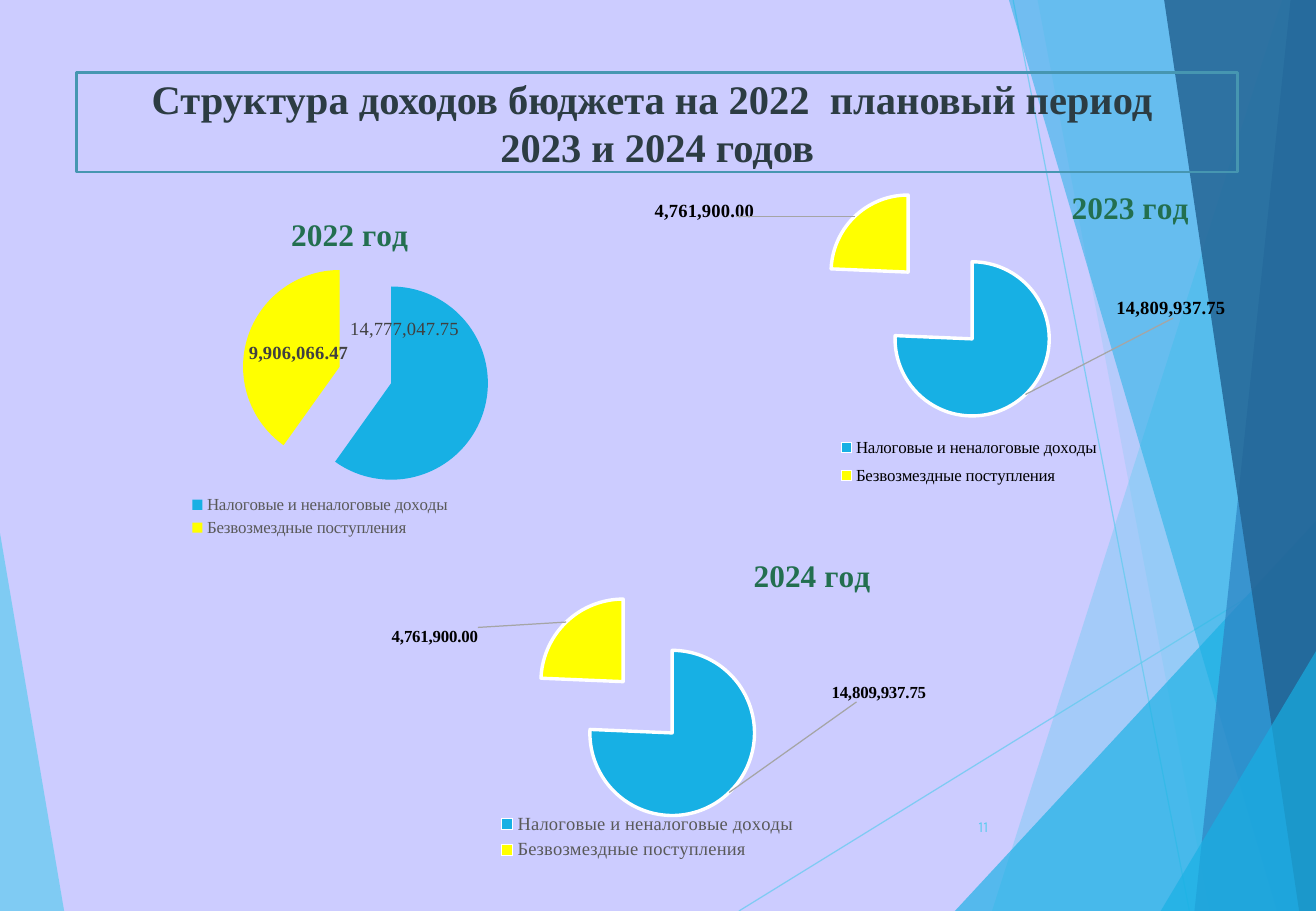
from dataclasses import dataclass

from lxml import etree
from pptx import Presentation
from pptx.chart.data import CategoryChartData
from pptx.dml.color import RGBColor
from pptx.enum.chart import XL_CHART_TYPE, XL_LABEL_POSITION, XL_LEGEND_POSITION
from pptx.enum.shapes import MSO_CONNECTOR, MSO_SHAPE
from pptx.enum.text import MSO_ANCHOR, PP_ALIGN
from pptx.oxml.ns import qn
from pptx.util import Pt

PIE = XL_CHART_TYPE.PIE
BEST_FIT = XL_LABEL_POSITION.BEST_FIT
INSIDE_END = XL_LABEL_POSITION.INSIDE_END
BOTTOM = XL_LEGEND_POSITION.BOTTOM
RIGHT_SIDE = XL_LEGEND_POSITION.RIGHT
STRAIGHT = MSO_CONNECTOR.STRAIGHT
RECTANGLE = MSO_SHAPE.RECTANGLE
MIDDLE = MSO_ANCHOR.MIDDLE
CENTER = PP_ALIGN.CENTER
RIGHT = PP_ALIGN.RIGHT

WIDTH, HEIGHT = 780, 540
NUMBER_FORMAT = "#,##0.00"
CATEGORIES = ["Налоговые и неналоговые доходы", "Безвозмездные поступления"]


@dataclass(frozen=True)
class Theme:
    background: str = "CCCCFF"
    sky: str = "5FCBEF"
    azure: str = "17B0E4"
    blue: str = "2E83C3"
    navy: str = "226292"
    frame: str = "4696B1"
    heading: str = "2C3C43"
    year: str = "236F50"
    gift: str = "FFFF00"
    black: str = "000000"
    gray: str = "595959"
    dark: str = "404040"
    leader: str = "A5A5A5"
    white: str = "FFFFFF"
    serif: str = "Times New Roman"
    sans: str = "Karla"
    heading_size: float = 24
    year_size: float = 18.6
    large_size: float = 11
    base_size: float = 10
    small_size: float = 9


@dataclass(frozen=True)
class Pie:
    year: str
    box: tuple
    values: tuple
    explosion: int
    plot: tuple
    title: tuple
    legend: tuple
    legend_side: object
    legend_color: str
    legend_size: float
    label_position: object
    label_size: float
    label_color: str
    label_offsets: tuple
    label_bold: tuple = (True, True)
    outlined: bool = True


def style_font(font, size, color, name, bold=False):
    font.size = Pt(size)
    font.color.rgb = RGBColor.from_string(color)
    font.name = name
    font.bold = bold


def write_text(frame, text, align=None, **style):
    for index, line in enumerate(text.split("\n")):
        para = frame.add_paragraph() if index else frame.paragraphs[0]
        para.alignment = align
        span = para.add_run()
        span.text = line
        style_font(span.font, **style)


def manual_layout(x, y, width=None, height=None, inner=False, edge=True):
    layout = etree.Element(qn("c:layout"))
    manual = etree.SubElement(layout, qn("c:manualLayout"))
    settings = [("layoutTarget", "inner")] if inner else []
    if edge:
        settings += [("xMode", "edge"), ("yMode", "edge")]
    settings += [("x", x), ("y", y), ("w", width), ("h", height)]
    for tag, value in settings:
        if value is not None:
            etree.SubElement(manual, qn(f"c:{tag}"), val=str(value))
    return layout


def place(parent, layout, after=None):
    for previous in parent.findall(qn("c:layout")):
        parent.remove(previous)
    if after:
        parent.find(qn(after)).addnext(layout)
    else:
        parent.insert(0, layout)


class SlideBuilder:
    def __init__(self, page, theme):
        self.page = page
        self.theme = theme
        fill = page.background.fill
        fill.solid()
        fill.fore_color.rgb = RGBColor.from_string(theme.background)

    def set_opacity(self, shape, percent):
        for color in shape.element.spPr.iter(qn("a:srgbClr")):
            etree.SubElement(color, qn("a:alpha"), val=str(percent * 1000))

    def facet(self, points, color, opacity):
        outline = self.page.shapes.build_freeform(*points[0], scale=Pt(1))
        outline.add_line_segments(points[1:], close=True)
        shape = outline.convert_to_shape()
        shape.shadow.inherit = False
        shape.fill.solid()
        shape.fill.fore_color.rgb = RGBColor.from_string(color)
        shape.line.fill.background()
        self.set_opacity(shape, opacity)

    def line(self, *ends):
        line = self.page.shapes.add_connector(STRAIGHT, *map(Pt, ends))
        line.line.color.rgb = RGBColor.from_string(self.theme.sky)
        line.line.width = Pt(0.75)
        self.set_opacity(line, 70)
        etree.SubElement(line.element.spPr, qn("a:effectLst"))

    def heading(self, text, *box):
        theme = self.theme
        shape = self.page.shapes.add_shape(RECTANGLE, *map(Pt, box))
        shape.shadow.inherit = False
        shape.fill.background()
        shape.line.color.rgb = RGBColor.from_string(theme.frame)
        shape.line.width = Pt(1.5)
        shape.text_frame.vertical_anchor = MIDDLE
        write_text(shape.text_frame, text, align=CENTER, size=theme.heading_size,
                   color=theme.heading, name=theme.serif, bold=True)

    def page_number(self, text, *box):
        theme = self.theme
        frame = self.page.shapes.add_textbox(*map(Pt, box)).text_frame
        frame.word_wrap = True
        frame.vertical_anchor = MIDDLE
        write_text(frame, text, align=RIGHT, size=theme.small_size,
                   color=theme.sky, name=theme.sans)

    def pie(self, pie):
        theme = self.theme
        data = CategoryChartData(number_format=NUMBER_FORMAT)
        data.categories = CATEGORIES
        data.add_series("Series 1", pie.values)
        chart = self.page.shapes.add_chart(PIE, *map(Pt, pie.box), data).chart
        style_font(chart.font, theme.base_size, theme.black, theme.sans)
        chart.has_title = True
        title = chart.chart_title
        write_text(title.text_frame, pie.year, size=theme.year_size,
                   color=theme.year, name=theme.serif, bold=True)
        place(title._element, manual_layout(*pie.title), after="c:tx")
        chart.has_legend = True
        legend = chart.legend
        legend.position = pie.legend_side
        legend.include_in_layout = False
        style_font(legend.font, pie.legend_size, pie.legend_color, theme.serif)
        place(legend._element, manual_layout(*pie.legend), after="c:legendPos")
        plot = chart.plots[0]
        plot.vary_by_categories = True
        place(chart.element.find(".//" + qn("c:plotArea")), manual_layout(*pie.plot, inner=True))
        self.slices(plot.series[0], pie)

    def slices(self, series, pie):
        theme = self.theme
        explosion = etree.Element(qn("c:explosion"), val=str(pie.explosion))
        series._element.find(qn("c:tx")).addnext(explosion)
        labels = series.data_labels
        labels.show_value = True
        labels.number_format = NUMBER_FORMAT
        labels.number_format_is_linked = False
        labels.position = pie.label_position
        style_font(labels.font, pie.label_size, pie.label_color, theme.serif, True)
        for index, color in enumerate((theme.azure, theme.gift)):
            point = series.points[index]
            point.format.fill.solid()
            point.format.fill.fore_color.rgb = RGBColor.from_string(color)
            if pie.outlined:
                point.format.line.color.rgb = RGBColor.from_string(theme.white)
                point.format.line.width = Pt(2)
            else:
                point.format.line.fill.background()
            label = point.data_label
            style_font(label.font, pie.label_size, pie.label_color, theme.serif,
                       pie.label_bold[index])
            label.position = pie.label_position
        for body in labels._element.iter(qn("a:bodyPr")):
            body.set("wrap", "none")
        for element, offset in zip(labels._element.findall(qn("c:dLbl")), pie.label_offsets):
            place(element, manual_layout(*offset, edge=False), after="c:idx")
        for previous in labels._element.findall(qn("c:showLeaderLines")):
            previous.set("val", str(int(pie.outlined)))
            leader = etree.Element(qn("c:leaderLines"))
            previous.addnext(leader)
            line = etree.SubElement(etree.SubElement(leader, qn("c:spPr")), qn("a:ln"), w="9525")
            fill = etree.SubElement(line, qn("a:solidFill"))
            etree.SubElement(fill, qn("a:srgbClr"), val=theme.leader)


def main():
    theme = Theme()
    deck = Presentation()
    deck.slide_width, deck.slide_height = Pt(WIDTH), Pt(HEIGHT)
    builder = SlideBuilder(deck.slides.add_slide(deck.slide_layouts[6]), theme)

    builder.facet([(0, 316), (38, HEIGHT), (0, HEIGHT)], theme.sky, 70)
    builder.line(438, HEIGHT, WIDTH, 329)
    builder.line(600.5, 0, 705, HEIGHT)
    top, bottom = (WIDTH, 0), (WIDTH, HEIGHT)
    for start, end, color, opacity in (
        ((760, 0), (588, HEIGHT), theme.sky, 36),
        ((615, 0), (717, HEIGHT), theme.sky, 20),
        ((WIDTH, 309), (566, HEIGHT), theme.azure, 66),
        ((598, 0), (757, HEIGHT), theme.azure, 50),
        ((765, 0), (708, HEIGHT), theme.blue, 70),
        ((690.5, 0), (770.5, HEIGHT), theme.navy, 82),
        ((WIDTH, 386), (688, HEIGHT), theme.azure, 66),
    ):
        corner = [] if start[0] == WIDTH else [top]
        builder.facet([start, end, bottom] + corner, color, opacity)

    later_values = (14809937.75, 4761900)
    for pie in (
        Pie("2022 год", (37, 117.5, 339, 209.5), (14777047.75, 9906066.47), 28,
            (0.06, 0.15, 0.94, 0.7), (0.39, 0.03), (0.21, 0.83, 0.48, 0.14), BOTTOM,
            theme.gray, theme.base_size, INSIDE_END, theme.large_size, theme.dark,
            ((-0.03, -0.2), (-0.01, 0.01)), (False, True), False),
        Pie("2023 год", (388, 108, 338.5, 195), later_values, 60,
            (0, 0, 1, 0.75), (0.72, 0), (0.3, 0.75, 0.5, 0.2), RIGHT_SIDE,
            theme.black, theme.base_size, BEST_FIT, theme.large_size, theme.black,
            ((0.25, -0.31), (-0.2, 0.03))),
        Pie("2024 год", (219, 324, 331, 194.5), later_values, 43,
            (0, 0.13, 1, 0.72), (0.68, 0.01), (0.21, 0.8, 0.58, 0.17), BOTTOM,
            theme.gray, theme.large_size, BEST_FIT, theme.base_size, theme.black,
            ((0.22, -0.35), (-0.15, 0.09))),
    ):
        builder.pie(pie)

    builder.heading("Структура доходов бюджета на 2022  плановый период \n2023 и 2024 годов",
                    45.5, 43, 688, 59)
    builder.page_number("11", 543, 476, 50, 28)
    deck.save("out.pptx")


if __name__ == "__main__":
    main()
